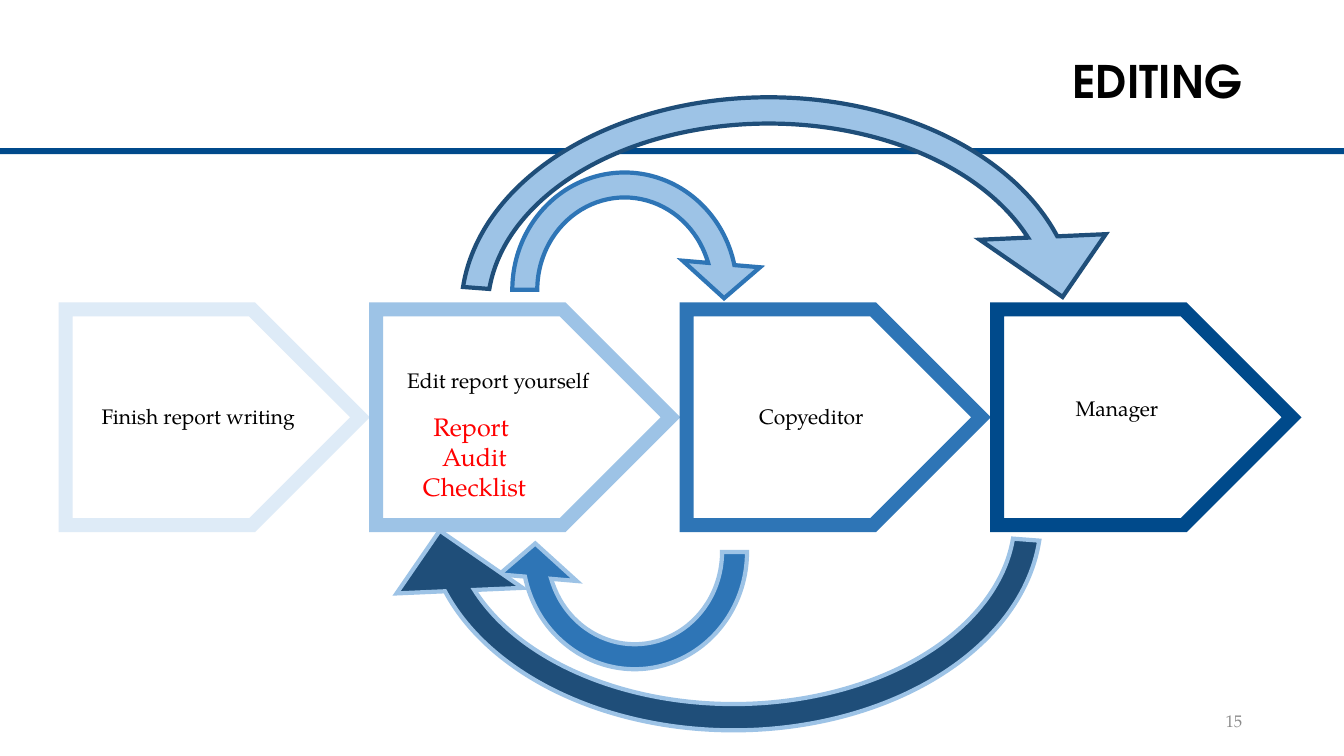
from lxml import etree
from pptx import Presentation
from pptx import util as u
from pptx.dml.color import RGBColor
from pptx.enum import shapes, text
from pptx.oxml import ns

BLACK = RGBColor(0x00, 0x00, 0x00)
GRAY = RGBColor(0x8C, 0x8C, 0x8C)
RED = RGBColor(0xFF, 0x00, 0x00)
NAVY = RGBColor(0x00, 0x4A, 0x8B)
PALE = RGBColor(0xDE, 0xEB, 0xF7)
LIGHT = RGBColor(0x9D, 0xC3, 0xE6)
MID = RGBColor(0x2E, 0x75, 0xB6)
DARK = RGBColor(0x1F, 0x4E, 0x79)

SHAPE = shapes.MSO_SHAPE
ALIGN = text.PP_ALIGN
MIDDLE = text.MSO_ANCHOR.MIDDLE
BODY = "TeX Gyre Pagella"
HEAD = "TeX Gyre Adventor"


class Deck:
    def __init__(self):
        self.prs = Presentation()
        self.prs.slide_width = u.Inches(13.33)
        self.prs.slide_height = u.Inches(7.5)
        self.slide = self.prs.slides.add_slide(self.prs.slide_layouts[5])

    def style(self, frame, lines, color, align, font, para=None):
        frame.text = "\n".join(lines)
        for item in frame.paragraphs:
            for key, val in {"alignment": align, **(para or {})}.items():
                setattr(item, key, val)
            for run in item.runs:
                for key, val in {"name": BODY, **font}.items():
                    setattr(run.font, key, val)
                run.font.color.rgb = color

    def title(self, words, box):
        head = self.slide.shapes.title
        for key, val in zip(("left", "top", "width", "height"), box):
            setattr(head, key, u.Inches(val))
        frame = head.text_frame
        frame.auto_size = text.MSO_AUTO_SIZE.NONE
        frame.vertical_anchor = MIDDLE
        font = {"name": HEAD, "size": u.Pt(32), "bold": True}
        self.style(frame, [words], BLACK, ALIGN.RIGHT, font, {"line_spacing": 0.9})

    def label(self, lines, box, size=15, color=BLACK, align=ALIGN.LEFT,
              wrap=True, anchor=text.MSO_ANCHOR.TOP):
        note = self.slide.shapes.add_textbox(*map(u.Inches, box))
        frame = note.text_frame
        frame.word_wrap = wrap
        frame.vertical_anchor = anchor
        self.style(frame, lines, color, align, {"size": u.Pt(size)})

    def shape(self, kind, box, fill=None, line=None, width=0, adjust=(), turn=0):
        item = self.slide.shapes.add_shape(kind, *map(u.Inches, box))
        item.shadow.inherit = False
        item.rotation = turn
        for spot, val in enumerate(adjust):
            item.adjustments[spot] = val
        if fill is None:
            item.fill.background()
        else:
            item.fill.solid()
            item.fill.fore_color.rgb = fill
        if line is None:
            item.line.fill.background()
        else:
            item.line.color.rgb = line
            item.line.width = u.Pt(width)
            edge = item.element.spPr.find(ns.qn("a:ln"))
            join = etree.SubElement(edge, ns.qn("a:miter"))
            join.set("lim", "800000")


def main():
    deck = Deck()
    deck.shape(SHAPE.RECTANGLE, (0, 1.47, 13.33, 0.06), NAVY)
    deck.title("EDITING", (1.89, 0.4, 10.53, 0.86))
    deck.label(["15"], (9.42, 6.95, 3, 0.4), 12, GRAY, ALIGN.RIGHT, anchor=MIDDLE)

    for step, color in enumerate((PALE, LIGHT, MID, NAVY)):
        box = (0.65 + 3.08 * step, 3.07, 2.92, 2.14)
        deck.shape(SHAPE.PENTAGON, box, line=color, width=10)

    for words, left, top, width in (
        ("Finish report writing", 0.91, 3.95, 2.15),
        ("Edit report yourself", 3.94, 3.6, 2.03),
        ("Copyeditor", 7.43, 3.95, 2.1),
        ("Manager", 10.57, 3.87, 1.03),
    ):
        deck.label([words], (left, top, width, 0.35), wrap=words == "Copyeditor")

    small = (2.75, 2.85), (0.09, 11.88, 207.04, 108, 0.14)
    large = (7.09, 5.21), (0.05, 7.43, 207.05, 110.58, 0.12)
    for spot, (size, adjust), fill, line, turn in (
        ((4.82, 1.45), small, LIGHT, MID, 0),
        ((4.92, 4.05), small, MID, LIGHT, 180),
        ((4.08, 0.47), large, LIGHT, DARK, 0),
        ((3.73, 2.53), large, DARK, LIGHT, 180),
    ):
        deck.shape(SHAPE.CIRCULAR_ARROW, spot + size, fill, line, 3, adjust, turn)

    deck.label(["Report ", "Audit Checklist"], (3.86, 4.03, 1.69, 1.01),
               18, RED, ALIGN.CENTER)
    deck.prs.save("out.pptx")


if __name__ == "__main__":
    main()
